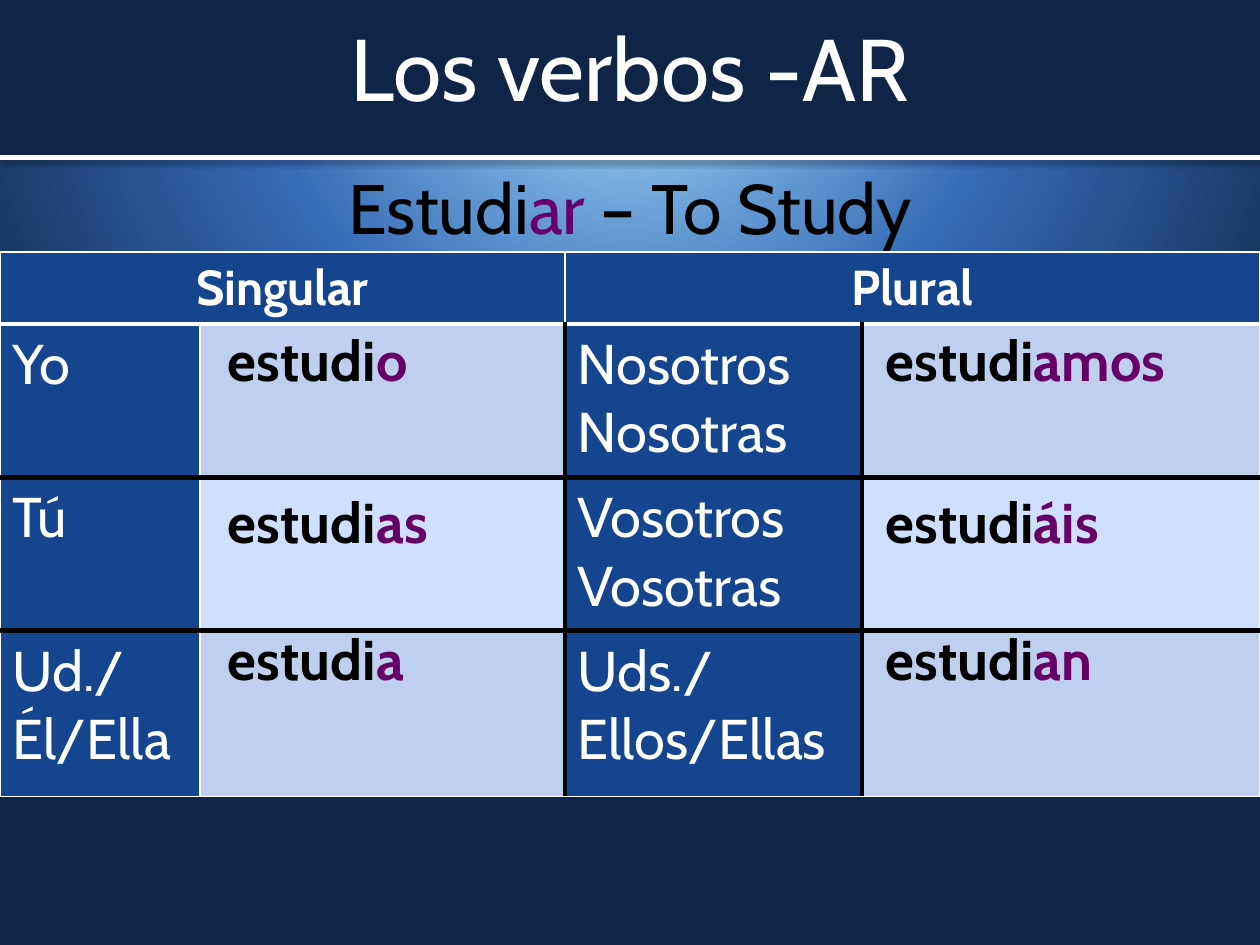
"""Build a slide with the present-tense forms of a Spanish -AR verb."""
import dataclasses

import pptx
import pptx.dml.color
import pptx.enum.shapes
import pptx.enum.text
import pptx.oxml
import pptx.oxml.ns
import pptx.util

Cm = pptx.util.Cm
Pt = pptx.util.Pt
Color = pptx.dml.color.RGBColor.from_string
qn = pptx.oxml.ns.qn
CENTER = pptx.enum.text.PP_ALIGN.CENTER
LEFT = pptx.enum.text.PP_ALIGN.LEFT
NAMESPACE = pptx.oxml.ns.nsdecls("a")
PLAIN_TABLE = "{2D5ABB26-0587-4C30-8999-92F81FD0307C}"


@dataclasses.dataclass(frozen=True)
class Theme:
    font: str = "Cabin"
    navy: str = "0E2547"
    middle_blue: str = "376CB8"
    light_blue: str = "B1E9FF"
    label_blue: str = "15458F"
    bands: tuple = ("BFCFEF", "CEDFFF")
    ending: str = "660066"
    black: str = "000000"
    white: str = "FFFFFF"
    title_size: int = 50
    subtitle_size: int = 40
    header_size: int = 28
    cell_size: int = 32
    thin: int = 1
    thick: int = 3


theme = Theme()


def write_span(para, text, size, color, bold=False, align=LEFT):
    para.alignment = align
    for number, line in enumerate(text.split("\n")):
        if number:
            para.add_line_break()
        span = para.add_run()
        span.text = line
        span.font.name = theme.font
        span.font.size = Pt(size)
        span.font.bold = bold
        span.font.color.rgb = Color(color)


def add_plain_table(page, rows, columns, left, top, width, height):
    frame = page.shapes.add_table(rows, columns, Cm(left), Cm(top), Cm(width), Cm(height))
    table = frame.table
    table.first_row = False
    table.horz_banding = False
    frame._element.find(".//" + qn("a:tableStyleId")).text = PLAIN_TABLE
    return table


deck = pptx.Presentation()
deck.slide_width = Cm(25.4)
deck.slide_height = Cm(19.05)
page = deck.slides.add_slide(deck.slide_layouts[0])

page.background.fill.gradient()
gradient = page._element.find(".//" + qn("a:gradFill"))
gradient.clear()
stops = "".join(
    f'<a:gs pos="{position * 1000}"><a:srgbClr val="{color}"/></a:gs>'
    for position, color in ((0, theme.light_blue), (48, theme.middle_blue), (100, theme.navy))
)
gradient.append(pptx.oxml.parse_xml(f"<a:gsLst {NAMESPACE}>{stops}</a:gsLst>"))
gradient.append(pptx.oxml.parse_xml(
    f'<a:path {NAMESPACE} path="circle">'
    '<a:fillToRect l="50000" t="-80000" r="50000" b="180000"/></a:path>'
))

banner = page.shapes.add_shape(
    pptx.enum.shapes.MSO_SHAPE.RECTANGLE, 0, 0, deck.slide_width, Cm(3.18)
)
banner.shadow.inherit = False
banner.fill.solid()
banner.fill.fore_color.rgb = Color(theme.navy)
banner.line.fill.background()
page.shapes._spTree.insert(2, banner._element)

title, subtitle = page.placeholders
for box, top, height, anchor in (
    (title, 0, 2.69, pptx.enum.text.MSO_ANCHOR.MIDDLE),
    (subtitle, 3.18, 13.21, pptx.enum.text.MSO_ANCHOR.TOP),
):
    box.left, box.top, box.width, box.height = 0, Cm(top), deck.slide_width, Cm(height)
    box.text_frame.vertical_anchor = anchor
    box.text_frame.auto_size = pptx.enum.text.MSO_AUTO_SIZE.NONE
write_span(title.text_frame.paragraphs[0], "Los verbos -AR",
           size=theme.title_size, color=theme.white, align=CENTER)
for text, color in (("Estudi", theme.black), ("ar ", theme.ending), ("– To Study", theme.black)):
    write_span(subtitle.text_frame.paragraphs[0], text,
               size=theme.subtitle_size, color=color, align=CENTER)

divider = page.shapes.add_connector(
    pptx.enum.shapes.MSO_CONNECTOR.STRAIGHT, 0, Cm(3.18), deck.slide_width, Cm(3.18)
)
divider.line.color.rgb = Color(theme.white)
divider.line.width = Pt(theme.thick)
divider._element.spPr.append(pptx.oxml.parse_xml(
    f'<a:effectLst {NAMESPACE}><a:outerShdw blurRad="{Pt(3.1)}" dist="{Pt(1.6)}" dir="5400000">'
    f'<a:srgbClr val="{theme.black}"><a:alpha val="38000"/></a:srgbClr></a:outerShdw></a:effectLst>'
))

column_widths = (4.03, 7.36, 5.99, 8.02)
row_heights = (1.44, 3.09, 3.09, 3.34)
labels = (
    ("Singular", "", "Plural", ""),
    ("Yo", "", "Nosotros|Nosotras", ""),
    ("Tú", "", "Vosotros|Vosotras", ""),
    ("Ud./\nÉl/Ella", "", "Uds./\nEllos/Ellas", ""),
)
white_thin = (theme.white, theme.thin)
white_thick = (theme.white, theme.thick)
black_thick = (theme.black, theme.thick)
row_edges = (white_thin, white_thick, black_thick, black_thick, white_thin)
column_edges = (white_thin, white_thin, black_thick, black_thick, white_thin)

grid = add_plain_table(page, 4, 4, 0, 5.08, sum(column_widths), sum(row_heights))
for column, width in zip(grid.columns, column_widths):
    column.width = Cm(width)
for row, height in zip(grid.rows, row_heights):
    row.height = Cm(height)
for first in (0, 2):
    grid.cell(0, first).merge(grid.cell(0, first + 1))

for r, row_labels in enumerate(labels):
    header = r == 0
    for c, label in enumerate(row_labels):
        cell = grid.cell(r, c)
        edges = {
            "lnL": white_thin if header else column_edges[c],
            "lnR": white_thin if header else column_edges[c + 1],
            "lnT": row_edges[r],
            "lnB": row_edges[r + 1],
        }
        properties = cell._tc.get_or_add_tcPr()
        for side, (color, width) in edges.items():
            properties.append(pptx.oxml.parse_xml(
                f'<a:{side} {NAMESPACE} w="{Pt(width)}"><a:solidFill>'
                f'<a:srgbClr val="{color}"/></a:solidFill></a:{side}>'
            ))
        cell.fill.solid()
        is_label = header or c % 2 == 0
        cell.fill.fore_color.rgb = Color(theme.label_blue if is_label else theme.bands[(r - 1) % 2])
        if not label:
            continue
        for number, line in enumerate(label.split("|")):
            frame = cell.text_frame
            para = frame.add_paragraph() if number else frame.paragraphs[0]
            write_span(para, line, size=theme.header_size if header else theme.cell_size,
                       color=theme.white, bold=header, align=CENTER if header else LEFT)

form_tops = (6.48, 9.73, 12.5)
form_columns = (
    (4.34, (("o", 6.25, 1.6), ("as", 5.94, 1.6), ("a", 6.25, 1.7))),
    (17.6, (("amos", 7.16, 1.73), ("áis", 6.4, 1.6), ("an", 6.1, 1.6))),
)
for left, forms in form_columns:
    for top, (ending, width, height) in zip(form_tops, forms):
        cell = add_plain_table(page, 1, 1, left, top, width, height).cell(0, 0)
        cell.fill.background()
        para = cell.text_frame.paragraphs[0]
        write_span(para, "estudi", size=theme.cell_size, color=theme.black, bold=True)
        write_span(para, ending, size=theme.cell_size, color=theme.ending, bold=True)

deck.save("out.pptx")
